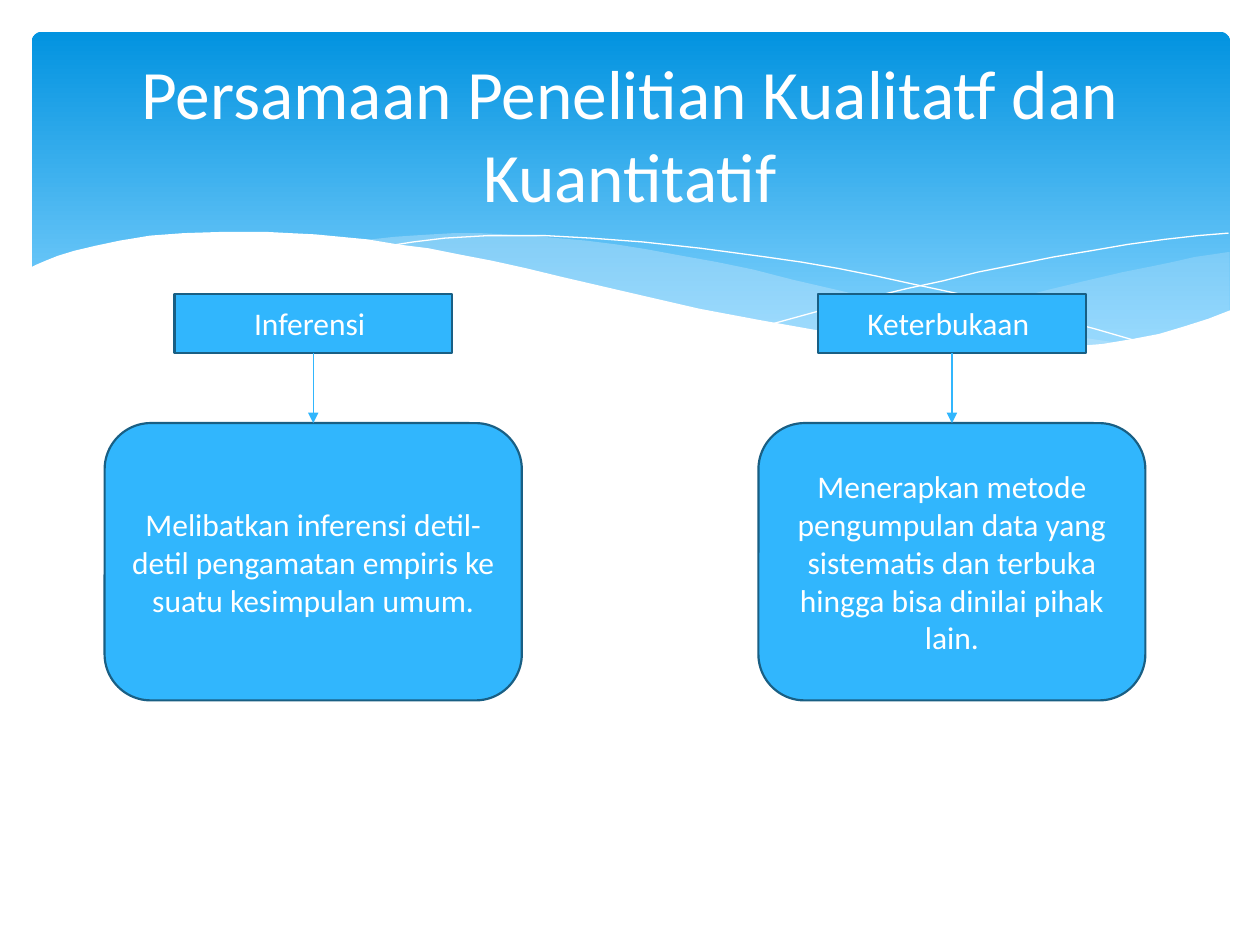
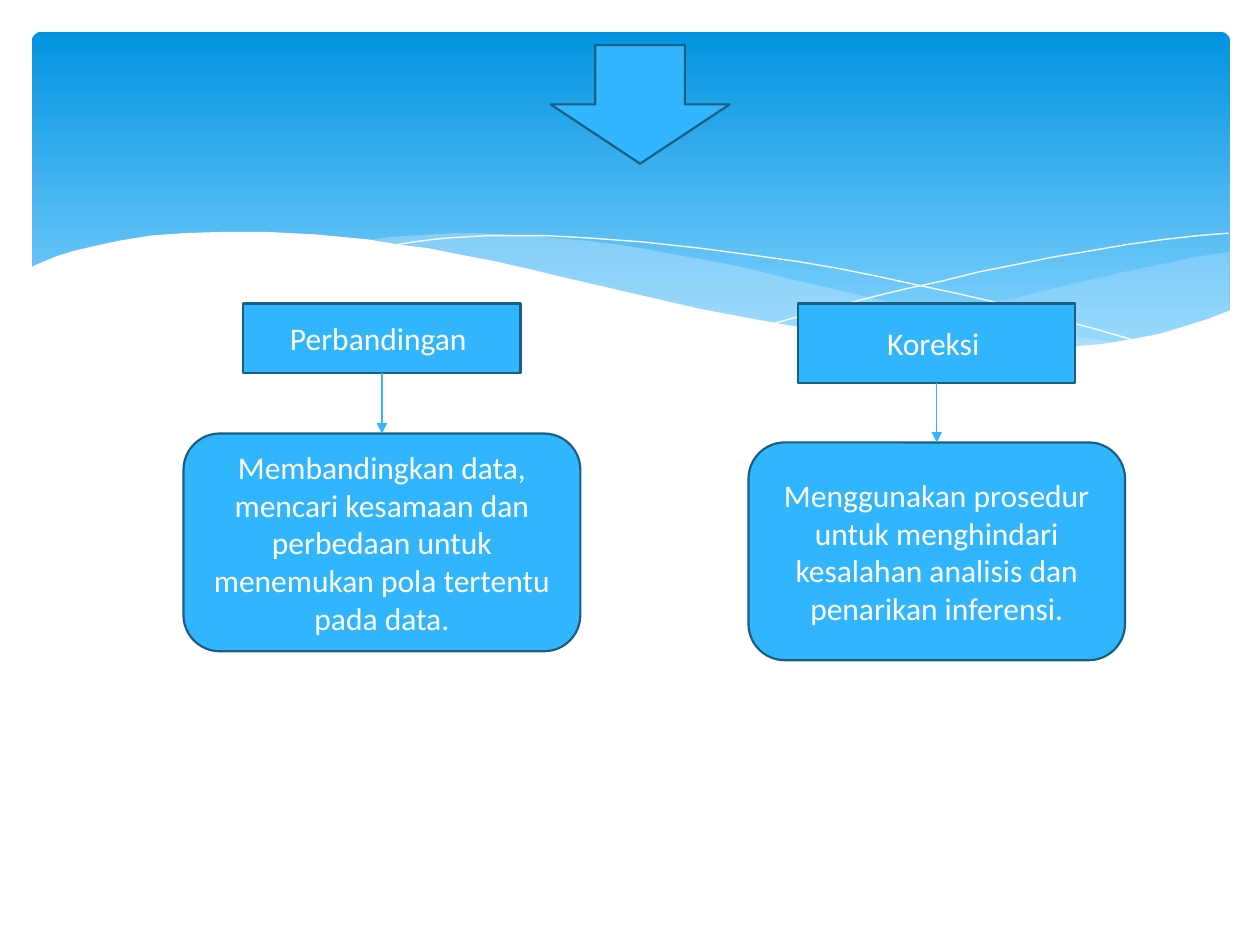
from typing import NamedTuple

from lxml.etree import SubElement
from pptx import Presentation
from pptx.dml.color import RGBColor
from pptx.enum.shapes import MSO_CONNECTOR as Connector, MSO_SHAPE as Shape
from pptx.enum.text import MSO_ANCHOR as Anchor, PP_ALIGN as Align
from pptx.oxml.ns import qn
from pptx.util import Cm, Pt


class Theme:
    white = RGBColor.from_string("FFFFFF")
    accent = RGBColor.from_string("31B6FD")
    outline = RGBColor.from_string("195F84")
    band_top = RGBColor.from_string("0293E0")
    band_bottom = RGBColor.from_string("83D3FE")
    veil = RGBColor.from_string("C6E7FC")
    font = "Calibri"
    title_size = Pt(39.6)
    body_size = Pt(18)
    outline_width = Pt(1.25)
    arrow_width = Pt(0.75)
    hairline = Pt(0)


class Box(NamedTuple):
    left: float
    top: float
    width: float
    height: float

    def lengths(self):
        return [Cm(value) for value in self]


WAVE_UNIT = Cm(2.54) / 100
BAND_BOX = Box(0.64, 0.64, 24.16, 6.86)
TITLE_BOX = Box(1.27, 0.94, 22.86, 3.48)
ARROW_BOX = Box(11.1, 0.91, 3.61, 2.39)

RIGHT_VEIL = [
    (975, 200), (962, 202), (948, 204), (935, 207), (921, 210), (906, 213),
    (891, 216), (861, 223), (832, 230), (805, 237), (779, 242), (753, 248),
    (729, 253), (706, 257), (683, 262), (661, 265), (691, 269), (719, 272),
    (745, 275), (769, 277), (803, 278), (835, 277), (863, 275), (889, 272),
    (913, 267), (935, 262), (949, 257), (963, 252), (976, 247), (976, 200),
]
MIDDLE_VEIL = [
    (893, 273), (866, 269), (837, 265), (807, 260), (775, 254), (741, 247),
    (706, 240), (668, 231), (629, 222), (598, 214), (569, 208), (541, 203),
    (514, 198), (489, 194), (465, 191), (442, 189), (420, 187), (399, 186),
    (380, 185), (361, 185), (344, 186), (328, 187), (313, 188), (286, 191),
    (323, 196), (362, 203), (404, 211), (449, 222), (491, 232), (530, 240),
    (566, 248), (601, 255), (634, 261), (665, 266), (695, 270), (722, 274),
    (748, 276), (773, 277), (796, 278), (828, 278), (857, 277), (876, 275),
]
FALLING_LINE = [
    (309, 195), (328, 192), (353, 189), (387, 187), (433, 187), (469, 189),
    (510, 192), (556, 197), (608, 204), (636, 208), (665, 213), (695, 219),
    (727, 226), (760, 233), (795, 241), (831, 251), (869, 261), (907, 272),
]
RISING_LINE = [
    (613, 257), (653, 246), (695, 235), (720, 229), (748, 223), (776, 216),
    (806, 210), (836, 204), (866, 199), (895, 194), (924, 190), (951, 187),
    (975, 185),
]
WHITE_WAVE = [
    (977, 246), (959, 253), (940, 259), (920, 265), (899, 269), (875, 273),
    (850, 275), (823, 277), (793, 276), (761, 275), (726, 272), (688, 268),
    (648, 262), (603, 254), (555, 245), (503, 233), (447, 220), (418, 213),
    (391, 207), (365, 202), (340, 197), (316, 194), (292, 190), (271, 188),
    (250, 186), (230, 185), (211, 184), (177, 184), (146, 185), (119, 187),
    (95, 191), (76, 195), (59, 199), (46, 203), (36, 207), (29, 210),
    (23, 213), (23, 329), (977, 329),
]


def write_text(shape, text, size=Theme.body_size, color=Theme.white):
    frame = shape.text_frame
    frame.word_wrap = True
    frame.vertical_anchor = Anchor.MIDDLE
    para = frame.paragraphs[0]
    para.alignment = Align.CENTER
    span = para.add_run()
    span.text = text
    span.font.name = Theme.font
    span.font.size = size
    span.font.color.rgb = color


def add_panel(page, kind, box, text=None):
    panel = page.shapes.add_shape(kind, *box.lengths())
    panel.shadow.inherit = False
    panel.fill.solid()
    panel.fill.fore_color.rgb = Theme.accent
    panel.line.color.rgb = Theme.outline
    panel.line.width = Theme.outline_width
    if text:
        write_text(panel, text)
    return panel


def add_wave(page, points, closed):
    builder = page.shapes.build_freeform(*points[0], scale=WAVE_UNIT)
    builder.add_line_segments(points[1:], close=closed)
    wave = builder.convert_to_shape()
    wave.shadow.inherit = False
    return wave


def add_wave_area(page, points, color, opacity=100):
    wave = add_wave(page, points, closed=True)
    wave.line.fill.background()
    wave.fill.solid()
    wave.fill.fore_color.rgb = color
    if opacity < 100:
        tint = wave.fill._xPr.find(".//" + qn("a:srgbClr"))
        SubElement(tint, qn("a:alpha"), val=str(opacity * 1000))


def add_wave_line(page, points):
    wave = add_wave(page, points, closed=False)
    wave.fill.background()
    wave.line.color.rgb = Theme.white
    wave.line.width = Theme.hairline


def add_band(page, box):
    band = page.shapes.add_shape(Shape.ROUNDED_RECTANGLE, *box.lengths())
    band.shadow.inherit = False
    band.adjustments[0] = 0.03
    band.line.fill.background()
    band.fill.gradient()
    band.fill.gradient_angle = 270
    stops = [(0, Theme.band_top), (0.9, Theme.band_bottom)]
    for stop, (position, color) in zip(band.fill.gradient_stops, stops):
        stop.position = position
        stop.color.rgb = color
    add_wave_area(page, RIGHT_VEIL, Theme.veil, opacity=29)
    add_wave_area(page, MIDDLE_VEIL, Theme.veil, opacity=40)
    add_wave_line(page, FALLING_LINE)
    add_wave_line(page, RISING_LINE)
    add_wave_area(page, WHITE_WAVE, Theme.white)


def add_title(page, box, text):
    title = page.shapes.add_textbox(*box.lengths())
    write_text(title, text, size=Theme.title_size)


def join_panels(page, head, body):
    arrow = page.shapes.add_connector(Connector.STRAIGHT, 0, 0, 0, 0)
    arrow.begin_connect(head, 2)
    arrow.end_connect(body, 0)
    arrow.line.color.rgb = Theme.accent
    arrow.line.width = Theme.arrow_width
    SubElement(arrow.line._get_or_add_ln(), qn("a:tailEnd"), type="triangle")
    SubElement(arrow._element.spPr, qn("a:effectLst"))


def add_branch(page, box, head_size, body_height, heading, text):
    head_width, head_height = head_size
    head_left = box.left + (box.width - head_width) / 2
    body_top = box.top + box.height - body_height
    head = add_panel(page, Shape.RECTANGLE,
                     Box(head_left, box.top, head_width, head_height), heading)
    body = add_panel(page, Shape.ROUNDED_RECTANGLE,
                     Box(box.left, body_top, box.width, body_height), text)
    join_panels(page, head, body)


def add_page(deck):
    page = deck.slides.add_slide(deck.slide_layouts[6])
    add_band(page, BAND_BOX)
    return page


def add_opening_page(deck):
    page = add_page(deck)
    add_title(page, TITLE_BOX, "Persamaan Penelitian Kualitatf dan Kuantitatif")
    add_branch(page, Box(2.11, 5.92, 8.41, 8.2), (5.59, 1.19), 5.59, "Inferensi ",
               "Melibatkan inferensi detil-detil pengamatan empiris ke "
               "suatu kesimpulan umum.")
    add_branch(page, Box(15.29, 5.92, 7.8, 8.2), (5.41, 1.19), 5.59, "Keterbukaan ",
               "Menerapkan metode pengumpulan data yang sistematis dan "
               "terbuka hingga bisa dinilai pihak lain.")


def add_following_page(deck):
    page = add_page(deck)
    add_branch(page, Box(3.7, 6.12, 8, 7.01), (5.59, 1.4), 4.39, "Perbandingan ",
               "Membandingkan data, mencari kesamaan dan perbedaan untuk "
               "menemukan pola tertentu pada data.")
    add_branch(page, Box(15.09, 6.12, 7.59, 7.19), (5.59, 1.6), 4.39, "Koreksi ",
               "Menggunakan prosedur untuk menghindari kesalahan analisis "
               "dan penarikan inferensi.")
    add_panel(page, Shape.DOWN_ARROW, ARROW_BOX)


def main():
    deck = Presentation()
    deck.slide_width, deck.slide_height = Cm(25.4), Cm(19.05)
    add_opening_page(deck)
    add_following_page(deck)
    deck.save("out.pptx")


if __name__ == "__main__":
    main()
